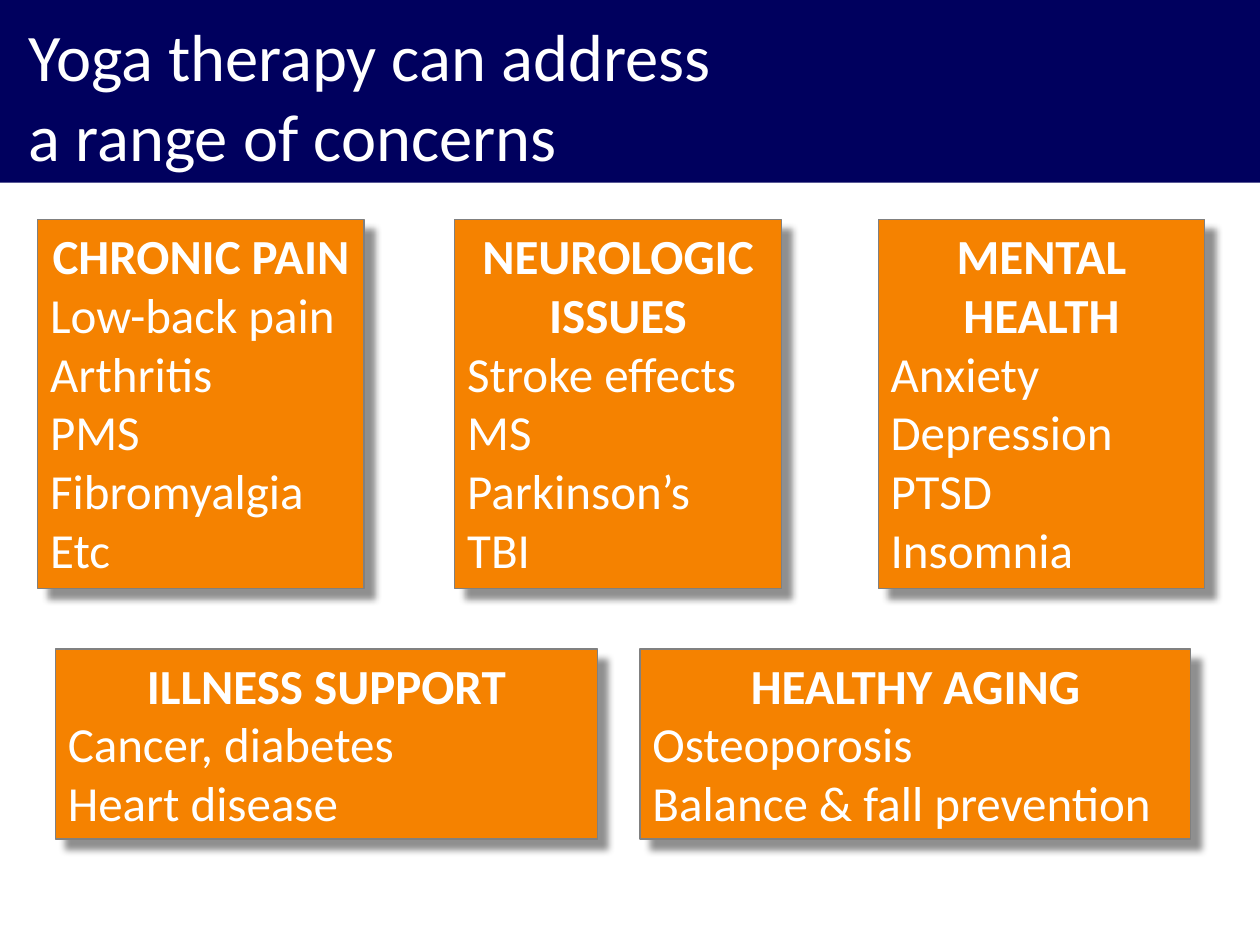
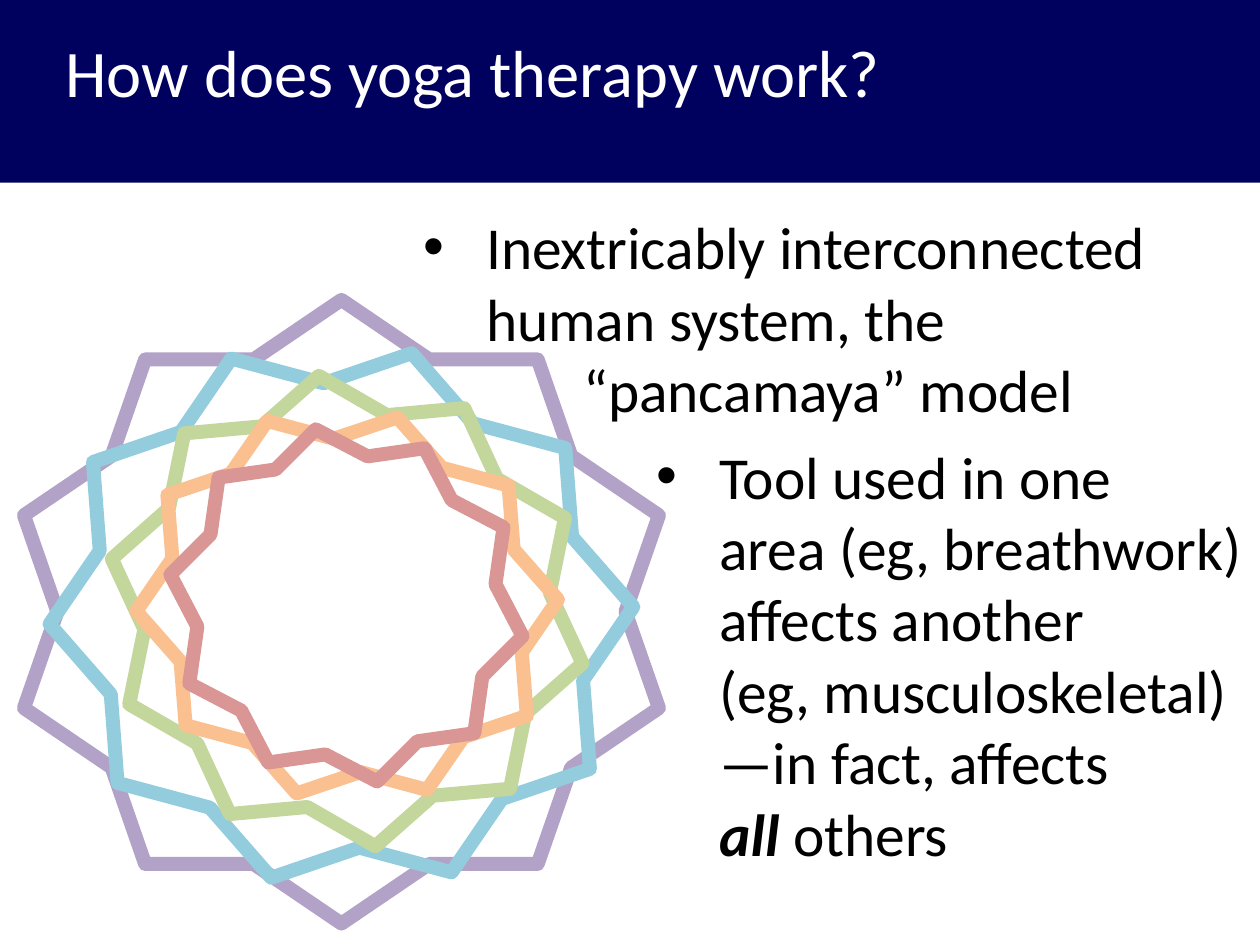
from lxml import etree
from pptx import Presentation
from pptx.dml.color import RGBColor
from pptx.enum import shapes, text
from pptx.oxml import ns
from pptx.util import Inches, Pt

NAVY, ORANGE, GRAY = "00005E", "F58200", "808080"
WHITE, BLACK = "FFFFFF", "000000"
FONT = "Calibri"


def color(value):
    return RGBColor.from_string(value)


def add_xml(parent, tag, **attributes):
    return etree.SubElement(parent, ns.qn(tag), attributes)


class Deck:
    def __init__(self):
        self.presentation = Presentation()
        self.presentation.slide_width = Inches(10)
        self.presentation.slide_height = Inches(7.5)
        self.slide = None

    def style(self, paragraph, size, ink, bold=False):
        for run in paragraph.runs:
            run.font.name = FONT
            run.font.size = Pt(size)
            run.font.bold = bold
            run.font.color.rgb = color(ink)

    def rectangle(self, left, top, width, height, fill):
        shape = self.slide.shapes.add_shape(
            shapes.MSO_SHAPE.RECTANGLE,
            Inches(left), Inches(top), Inches(width), Inches(height))
        shape.shadow.inherit = False
        shape.fill.solid()
        shape.fill.fore_color.rgb = color(fill)
        shape.line.fill.background()
        return shape

    def text_box(self, left, top, width, height):
        box = self.slide.shapes.add_textbox(
            Inches(left), Inches(top), Inches(width), Inches(height))
        box.text_frame.word_wrap = True
        box.text_frame.auto_size = text.MSO_AUTO_SIZE.SHAPE_TO_FIT_TEXT
        return box.text_frame

    def new_slide(self, title, left, top, width, height):
        layout = self.presentation.slide_layouts[6]
        self.slide = self.presentation.slides.add_slide(layout)
        self.rectangle(0, 0, 10, 1.45, NAVY)
        heading = self.text_box(left, top, width, height).paragraphs[0]
        heading.text = title
        self.style(heading, 38, WHITE)

    def concern(self, left, top, width, height, heading, examples):
        card = self.rectangle(left, top, width, height, ORANGE)
        card.line.color.rgb = color(GRAY)
        card.line.width = Pt(0.75)
        effects = card._element.spPr.find(ns.qn("a:effectLst"))
        shadow = add_xml(effects, "a:outerShdw", blurRad=str(Pt(4)), dist=str(Pt(8)),
                         dir="2700000", algn="tl", rotWithShape="0")
        shade = add_xml(shadow, "a:srgbClr", val=BLACK)
        add_xml(shade, "a:alpha", val="43000")
        frame = card.text_frame
        frame.word_wrap = True
        frame.auto_size = text.MSO_AUTO_SIZE.SHAPE_TO_FIT_TEXT
        frame.vertical_anchor = text.MSO_ANCHOR.TOP
        frame.text = "\n".join([heading, *examples])
        for index, paragraph in enumerate(frame.paragraphs):
            is_heading = index == 0
            paragraph.alignment = text.PP_ALIGN.CENTER if is_heading else text.PP_ALIGN.LEFT
            self.style(paragraph, 28, WHITE, is_heading)

    def point(self, left, top, width, height, statement, emphasis="", ending="", inset=""):
        frame = self.text_box(left, top, width, height)
        bullet = frame.paragraphs[0]
        bullet.text = statement
        if emphasis:
            bullet.add_run().text = emphasis
            bullet.add_run().text = ending
        self.style(bullet, 34, BLACK)
        for run in bullet.runs:
            if emphasis and run.text == emphasis:
                run.font.bold = run.font.italic = True
        properties = bullet._p.get_or_add_pPr()
        properties.set("marL", str(Inches(0.5)))
        properties.set("indent", str(Inches(-0.5)))
        add_xml(properties, "a:buFont", typeface="Arial")
        add_xml(properties, "a:buChar", char="•")
        if inset:
            continuation = frame.add_paragraph()
            continuation.text = inset
            continuation._p.get_or_add_pPr().set("marL", str(Inches(1.27)))
            self.style(continuation, 34, BLACK)

    def mandala(self, layers):
        group = self.slide.shapes.add_group_shape()
        for left, top, width, height, rotation, outline in layers:
            star = group.shapes.add_shape(
                shapes.MSO_SHAPE.STAR_10_POINT,
                Inches(left), Inches(top), Inches(width), Inches(height))
            star.rotation = rotation
            star.shadow.inherit = False
            star.fill.background()
            star.line.color.rgb = color(outline)
            star.line.width = Pt(8)
            add_xml(star.line._get_or_add_ln(), "a:round")


def main():
    deck = Deck()

    deck.new_slide("Yoga therapy can address\va range of concerns", 0.13, 0.07, 9.74, 1.38)
    upper_concerns = [
        (0.3, "CHRONIC PAIN", ["Low-back pain", "Arthritis", "PMS", "Fibromyalgia", "Etc"]),
        (3.61, "NEUROLOGIC\vISSUES", ["Stroke effects", "MS", "Parkinson’s", "TBI"]),
        (6.97, "MENTAL\vHEALTH", ["Anxiety", "Depression", "PTSD", "Insomnia"]),
    ]
    for left, heading, examples in upper_concerns:
        deck.concern(left, 1.74, 2.59, 2.93, heading, examples)
    lower_concerns = [
        (0.44, 4.3, "ILLNESS SUPPORT", ["Cancer, diabetes", "Heart disease"]),
        (5.08, 4.37, "HEALTHY AGING", ["Osteoporosis", "Balance & fall prevention"]),
    ]
    for left, width, heading, examples in lower_concerns:
        deck.concern(left, 5.15, width, 1.51, heading, examples)

    deck.new_slide("How does yoga therapy work?", 0.42, 0.2, 8.6, 0.74)
    deck.point(3.26, 1.62, 6.55, 1.82, "Inextricably interconnected\vhuman system, the",
               inset="“pancamaya” model")
    deck.point(5.11, 3.44, 5.14, 3.53,
               "Tool used in one\varea (eg, breathwork)\vaffects another\v"
               "(eg, musculoskeletal)\v—in fact, affects\v",
               emphasis="all", ending=" others")
    deck.mandala([
        (0.19, 2.38, 5.04, 4.95, 0, "B3A2C7"),
        (0.49, 2.73, 4.44, 4.31, 15, "93CDDD"),
        (0.93, 2.99, 3.65, 3.72, 30, "C3D69B"),
        (1.15, 3.26, 3.21, 3.09, 15, "FAC090"),
        (1.43, 3.37, 2.64, 2.87, 315, "D99694"),
    ])

    deck.presentation.save("out.pptx")


if __name__ == "__main__":
    main()
